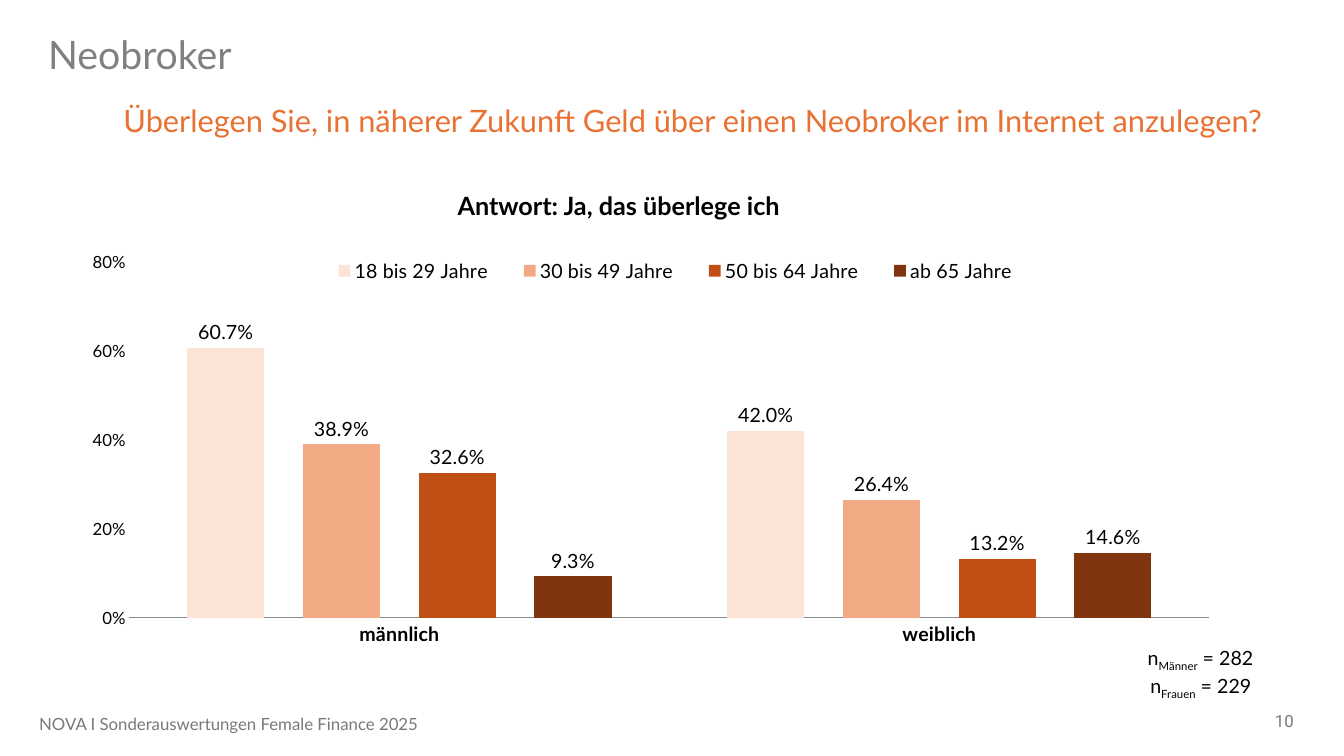
from lxml import etree
from pptx import Presentation
from pptx.chart.data import CategoryChartData
from pptx.dml.color import RGBColor
from pptx.enum.chart import XL_CHART_TYPE, XL_LABEL_POSITION, XL_LEGEND_POSITION, XL_TICK_MARK
from pptx.enum.text import MSO_ANCHOR, PP_ALIGN
from pptx.oxml.ns import qn
from pptx.util import Inches, Pt

LEFT, CENTER, RIGHT = PP_ALIGN.LEFT, PP_ALIGN.CENTER, PP_ALIGN.RIGHT
TOP, MIDDLE = MSO_ANCHOR.TOP, MSO_ANCHOR.MIDDLE
NO_TICK = XL_TICK_MARK.NONE

COLORS = {
    "black": "000000", "title": "808080", "question": "E97132", "footer": "797979",
    "axis": "8C8C8C", "18": "FBE3D6", "30": "F2AA84", "50": "C04F15", "65": "80350E",
}


def add_text(box, runs, size, color, align=LEFT, anchor=TOP, bold=False, font="Lato"):
    """Add a one-paragraph text box and return its paragraph."""
    tf = slide.shapes.add_textbox(*map(Inches, box)).text_frame
    tf.word_wrap = True
    tf.vertical_anchor = anchor
    p = tf.paragraphs[0]
    p.alignment = align
    p.font.name, p.font.size, p.font.bold = font, Pt(size), bold
    p.font.color.rgb = RGBColor.from_string(COLORS[color])
    for text in runs:
        p.add_run().text = text
    return p


def set_layout(parent, index, box, inner=False):
    """Place a chart part at x, y, w, h given as fractions of the chart."""
    for old in parent.findall(qn("c:layout")):
        parent.remove(old)
    layout = etree.Element(qn("c:layout"))
    manual = etree.SubElement(layout, qn("c:manualLayout"))
    values = [("layoutTarget", "inner")] if inner else []
    values += [("xMode", "edge"), ("yMode", "edge"), *zip("xywh", map(str, box))]
    for tag, value in values:
        etree.SubElement(manual, qn(f"c:{tag}")).set("val", value)
    parent.insert(index, layout)


prs = Presentation()
prs.slide_width, prs.slide_height = Inches(13.33), Inches(7.5)
slide = prs.slides.add_slide(prs.slide_layouts[6])

# Chart
age_groups = [
    ("18 bis 29 Jahre", (0.607, 0.42), "18"),
    ("30 bis 49 Jahre", (0.389, 0.264), "30"),
    ("50 bis 64 Jahre", (0.326, 0.132), "50"),
    ("ab 65 Jahre", (0.093, 0.146), "65"),
]
data = CategoryChartData(number_format="0.0%")
data.categories = ["männlich", "weiblich"]
for name, shares, _ in age_groups:
    data.add_series(name, shares)
chart = slide.shapes.add_chart(
    XL_CHART_TYPE.COLUMN_CLUSTERED,
    Inches(0.57), Inches(0.83), Inches(11.9), Inches(6.09), data).chart
chart.has_title = False
chart.font.name, chart.font.size = "Lato", Pt(14)
chart.font.color.rgb = RGBColor.from_string(COLORS["black"])

plot = chart.plots[0]
plot.gap_width, plot.overlap = 150, -50
plot.vary_by_categories = False
for series, (_, _, color) in zip(plot.series, age_groups):
    series.format.fill.solid()
    series.format.fill.fore_color.rgb = RGBColor.from_string(COLORS[color])
    labels = series.data_labels
    labels.show_value = True
    labels.position = XL_LABEL_POSITION.OUTSIDE_END
    labels.number_format, labels.number_format_is_linked = "0.0%", False
    labels.font.size = Pt(14)

cat_axis, val_axis = chart.category_axis, chart.value_axis
for axis in (cat_axis, val_axis):
    axis.major_tick_mark = axis.minor_tick_mark = NO_TICK
    axis.has_major_gridlines = False
cat_axis.tick_labels.font.size = Pt(14)
cat_axis.tick_labels.font.bold = True
cat_axis.format.line.color.rgb = RGBColor.from_string(COLORS["axis"])
cat_axis.format.line.width = Pt(0.75)
val_axis.minimum_scale, val_axis.maximum_scale, val_axis.major_unit = 0, 0.8, 0.2
val_axis.tick_labels.font.size = Pt(12)
val_axis.tick_labels.number_format = "0%"
val_axis.tick_labels.number_format_is_linked = False
val_axis.format.line.fill.background()

chart.has_legend = True
legend = chart.legend
legend.position = XL_LEGEND_POSITION.RIGHT
legend.include_in_layout = False
legend.font.size = Pt(14)
chart_xml = chart._chartSpace.chart
set_layout(chart_xml.plotArea, 0, (0.06, 0.29, 0.9, 0.58), inner=True)
set_layout(chart_xml.find(qn("c:legend")), 1, (0.21, 0.27, 0.61, 0.07))

# Headings
p = add_text((0.38, 0.3, 12.63, 0.53), ["Neobroker"], 28, "title", anchor=MIDDLE)
p.line_spacing = 0.9
add_text((0.92, 0.96, 11.9, 0.47),
         ["Überlegen Sie, in näherer Zukunft Geld über einen Neobroker im Internet anzulegen?"],
         22, "question", CENTER)
add_text((4.44, 1.84, 4.16, 0.4), ["Antwort: Ja, das überlege ich"], 18, "black", bold=True)

# Sample sizes
for left, top, group, count in [(10.66, 6.36, "Männer", 282), (10.64, 6.64, "Frauen", 229)]:
    p = add_text((left, top, 1.87, 0.34), ["n", group, f" = {count}"], 14, "black", RIGHT)
    p.runs[1].font._element.set("baseline", "-25000")

# Footer
add_text((0.29, 6.98, 6.7, 0.4), ["NOVA I Sonderauswertungen Female Finance 2025"],
         12, "footer", anchor=MIDDLE)
add_text((9.93, 6.95, 3, 0.4), ["10"], 12, "footer", RIGHT, MIDDLE, font="Roboto")

prs.save("out.pptx")
